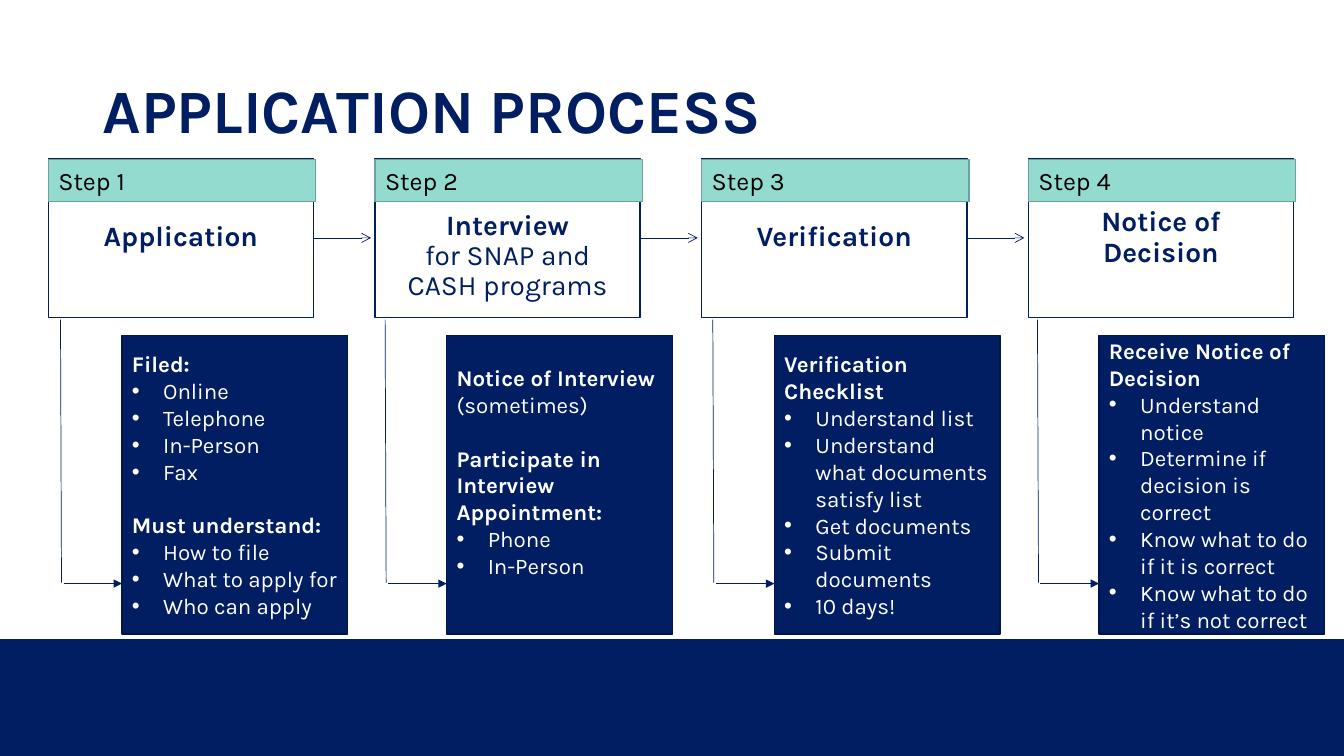
from lxml.etree import SubElement
from pptx import Presentation
from pptx.dml.color import RGBColor
from pptx.enum.shapes import MSO_CONNECTOR, MSO_SHAPE
from pptx.enum.text import MSO_ANCHOR, PP_ALIGN
from pptx.oxml.ns import qn
from pptx.util import Inches, Pt

COLORS = {
    "navy": "001E61",
    "edge": "001648",
    "mint": "93DACF",
    "mint_edge": "6DA199",
    "white": "FFFFFF",
    "black": "000000",
}
FONT = "Karla"
CARD_LEFT, CARD_PITCH, CARD_WIDTH = 0.48, 3.24, 2.63

STEPS = [
    {
        "name": "Application",
        "detail_left": 1.21,
        "groups": [
            ("Filed:", "", ["Online", "Telephone", "In-Person", "Fax"]),
            ("Must understand:", "", ["How to file", "What to apply for", "Who can apply"]),
        ],
    },
    {
        "name": "Interview",
        "scope": "for SNAP and CASH programs",
        "detail_left": 4.43,
        "bottom_inset": 0.31,
        "groups": [
            ("Notice of Interview ", "(sometimes)", []),
            ("Participate in Interview Appointment:", "", ["Phone", "In-Person"]),
        ],
    },
    {
        "name": "Verification",
        "detail_left": 7.68,
        "groups": [
            ("Verification Checklist", "", [
                "Understand list",
                "Understand what documents satisfy list",
                "Get documents",
                "Submit documents",
                "10 days!",
            ]),
        ],
    },
    {
        "name": "Notice of Decision",
        "detail_left": 10.9,
        "groups": [
            ("Receive Notice of Decision", "", [
                "Understand notice",
                "Determine if decision is correct",
                "Know what to do if it is correct",
                "Know what to do if it’s not correct",
            ]),
        ],
    },
]


def color(name):
    return RGBColor.from_string(COLORS[name])


def add_box(slide, left, top, width, height, fill=None, edge=None):
    box = slide.shapes.add_shape(
        MSO_SHAPE.RECTANGLE, Inches(left), Inches(top), Inches(width), Inches(height)
    )
    box.shadow.inherit = False
    if fill:
        box.fill.solid()
        box.fill.fore_color.rgb = color(fill)
    else:
        box.fill.background()
    if edge:
        box.line.color.rgb = color(edge)
        box.line.width = Pt(1)
    else:
        box.line.fill.background()
    box.text_frame.word_wrap = True
    box.text_frame.vertical_anchor = MSO_ANCHOR.MIDDLE
    return box


def add_line(slide, start, end, head=None):
    line = slide.shapes.add_connector(
        MSO_CONNECTOR.STRAIGHT, *(Inches(value) for value in (*start, *end))
    )
    line.line.color.rgb = color("navy")
    line.line.width = Pt(0.5)
    if head:
        SubElement(line.line._get_or_add_ln(), qn("a:tailEnd"), type=head)
    SubElement(line._element.spPr, qn("a:effectLst"))


def add_run(paragraph, text, size, ink, bold=False):
    run = paragraph.add_run()
    run.text = text
    run.font.name = FONT
    run.font.size = Pt(size)
    run.font.bold = bold
    run.font.color.rgb = color(ink)


def next_paragraph(frame, align=PP_ALIGN.LEFT):
    first = frame.paragraphs[0]
    paragraph = frame.add_paragraph() if first.runs else first
    paragraph.alignment = align
    return paragraph


def add_bullet(frame, text):
    paragraph = next_paragraph(frame)
    properties = paragraph._p.get_or_add_pPr()
    properties.set("marL", str(Inches(0.31)))
    properties.set("indent", str(-Inches(0.31)))
    SubElement(properties, qn("a:buFont"), typeface="Arial")
    SubElement(properties, qn("a:buChar"), char="•")
    add_run(paragraph, text, 16, "white")


def add_title(slide, text):
    title = slide.shapes.add_textbox(Inches(0.92), Inches(0.4), Inches(11.5), Inches(1.45))
    title.text_frame.word_wrap = True
    title.text_frame.vertical_anchor = MSO_ANCHOR.MIDDLE
    paragraph = next_paragraph(title.text_frame)
    paragraph.line_spacing = 0.9
    add_run(paragraph, text, 44, "navy", bold=True)


def add_card(slide, left, name, scope=None):
    frame = add_box(slide, left, 1.57, CARD_WIDTH, 1.58, edge="navy").text_frame
    frame.margin_left = frame.margin_right = Inches(0.16)
    frame.margin_top = frame.margin_bottom = Inches(0.16)
    heading = next_paragraph(frame, PP_ALIGN.CENTER)
    add_run(heading, name, 20, "navy", bold=True)
    if scope:
        frame.vertical_anchor = MSO_ANCHOR.BOTTOM
        scope_line = next_paragraph(frame, PP_ALIGN.CENTER)
        scope_line.line_spacing = 0.9
        add_run(scope_line, scope, 20, "navy")
    else:
        heading.line_spacing = 0.9


def add_branch(slide, detail_left):
    add_line(slide, (detail_left - 0.61, 3.17), (detail_left - 0.6, 5.78))
    add_line(slide, (detail_left - 0.58, 5.79), (detail_left, 5.79), "triangle")


def add_details(slide, left, groups, bottom_inset):
    frame = add_box(slide, left, 3.33, 2.24, 2.96, "navy", "edge").text_frame
    frame.margin_bottom = Inches(bottom_inset)
    for index, (heading, note, bullets) in enumerate(groups):
        paragraph = next_paragraph(frame)
        if index:
            paragraph.space_before = Pt(19)
        add_run(paragraph, heading, 16, "white", bold=True)
        if note:
            add_run(paragraph, note, 16, "white")
        for bullet in bullets:
            add_bullet(frame, bullet)


def add_step_label(slide, left, number):
    label = add_box(slide, left, 1.58, 2.65, 0.42, "mint", "mint_edge")
    add_run(next_paragraph(label.text_frame), f"Step {number}", 18, "black")


def main():
    deck = Presentation()
    deck.slide_width, deck.slide_height = Inches(13.33), Inches(7.5)
    slide = deck.slides.add_slide(deck.slide_layouts[6])
    add_box(slide, 0, 6.34, 13.33, 1.16, "navy")
    add_title(slide, "APPLICATION PROCESS")
    for index, step in enumerate(STEPS):
        left = CARD_LEFT + index * CARD_PITCH
        if index:
            previous_right = left - CARD_PITCH + CARD_WIDTH
            add_line(slide, (previous_right, 2.36), (previous_right + 0.57, 2.36), "arrow")
        add_card(slide, left, step["name"], step.get("scope"))
        add_branch(slide, step["detail_left"])
        add_details(slide, step["detail_left"], step["groups"], step.get("bottom_inset", 0.05))
        add_step_label(slide, left, index + 1)
    deck.save("out.pptx")


if __name__ == "__main__":
    main()
